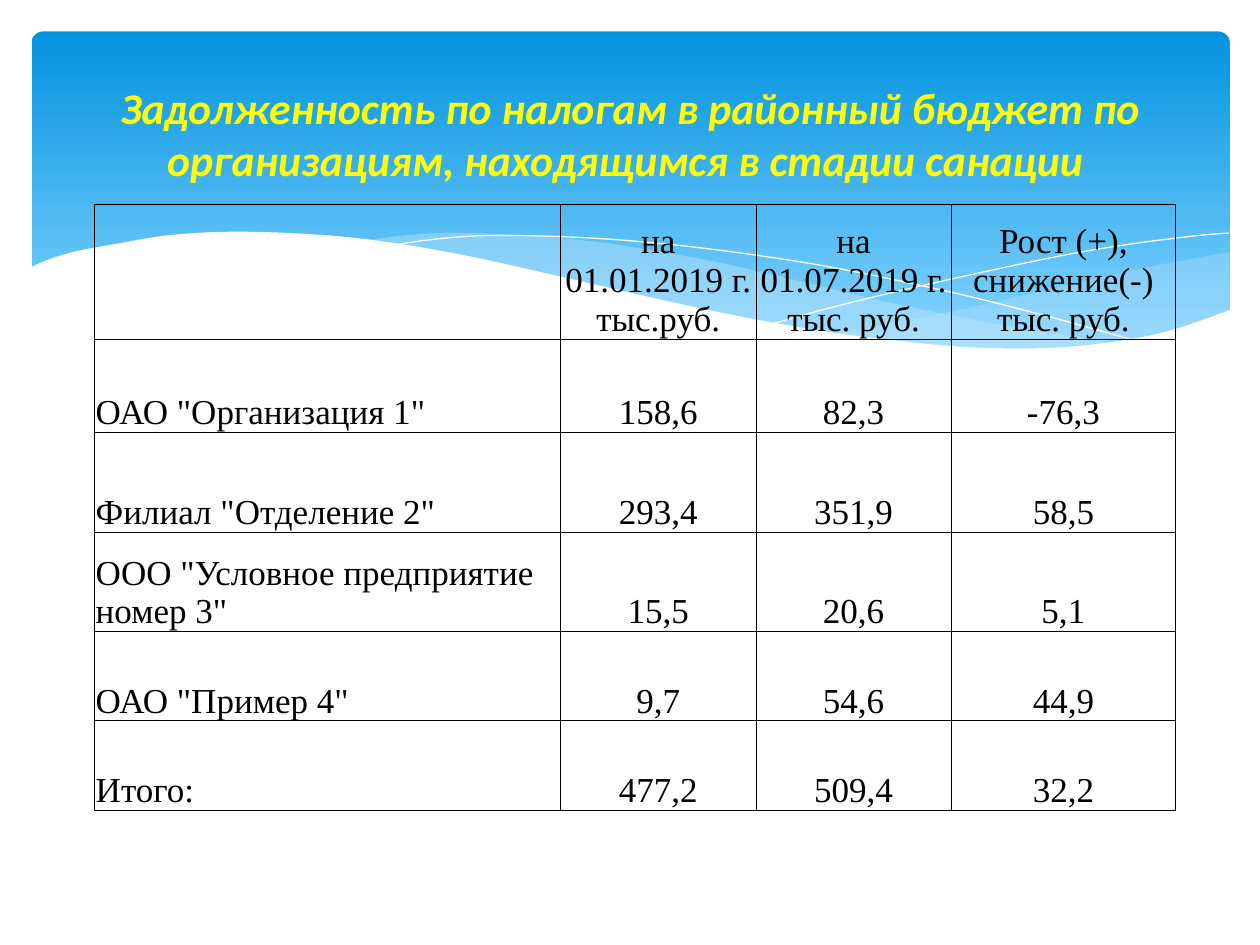
import dataclasses

import lxml.etree
import pptx
import pptx.dml.color
import pptx.enum.shapes
import pptx.enum.text
import pptx.oxml.ns
import pptx.util

Pt = pptx.util.Pt
qn = pptx.oxml.ns.qn
ALIGN = pptx.enum.text.PP_ALIGN
ANCHOR = pptx.enum.text.MSO_ANCHOR


@dataclasses.dataclass
class Theme:
    sky_top: str = "0293E0"
    sky_bottom: str = "83D3FE"
    wave: str = "C6E7FC"
    white: str = "FFFFFF"
    black: str = "000000"
    title: str = "FFFF00"
    title_font: str = "Calibri"
    table_font: str = "Times New Roman"
    title_size: float = 25
    table_size: float = 20
    border: float = 0.5


RIGHT_WAVE = [
    [(702.7, 144), (652, 153.4), (620, 160.6), (561, 174.2), (508.3, 185), (476, 190.8)],
    [(476, 190.8), (517.7, 195.8), (562, 199.4), (601, 199.4), (640, 196.6),
     (673, 188.6), (702.7, 177.8)],
]
MIDDLE_WAVE = [
    [(643, 196.6), (602.6, 190.8), (558, 183), (508, 172.8), (453, 159.8), (409.7, 149.8),
     (370, 142.6), (334.8, 137.5), (287, 133.9), (247.7, 133.2), (206, 137.5)],
    [(206, 137.5), (246, 143.3), (291, 152), (323.3, 159.8), (381.6, 172.8), (432.7, 183.6),
     (478.8, 191.5), (520, 197.3), (556.6, 199.4), (596, 200.2), (643, 196.6)],
]
FALLING_LINE = [
    [(222.5, 140.4), (247.7, 136.8), (278.6, 134.6), (324, 135.4), (367, 138.2),
     (419, 144), (478.8, 153.4), (547, 167.8), (598.3, 180.7), (653, 195.8)],
]
RISING_LINE = [
    [(441.4, 185), (483.8, 173.5), (538.6, 160.6), (602, 147), (644.4, 139.7),
     (684.7, 134.6), (702, 133.2)],
]
WHITE_WAVE = [
    [(703.4, 177), (669.6, 188.6), (638.6, 195), (602.6, 198.7), (560, 198.7),
     (522.7, 195.8), (481, 190.8), (434, 183), (381, 172), (321.8, 158.4),
     (262.8, 145.4), (210, 136.8), (165.6, 133.2), (127.4, 132.5), (95, 134.6),
     (68.4, 139), (42.5, 143.8), (26, 149), (16.6, 153.4)],
    [(16.6, 237), (703.4, 237)],
]

TITLE = "Задолженность по налогам в районный бюджет по организациям, находящимся в стадии санации "
ROWS = [
    ["", "на 01.01.2019 г. тыс.руб.", "на 01.07.2019 г. тыс. руб.",
     "Рост (+), снижение(-) тыс. руб."],
    ['ОАО "Организация 1"', "158,6", "82,3", "-76,3"],
    ['Филиал "Отделение 2"', "293,4", "351,9", "58,5"],
    ['ООО "Условное предприятие номер 3"', "15,5", "20,6", "5,1"],
    ['ОАО "Пример 4"', "9,7", "54,6", "44,9"],
    ["Итого:", "477,2", "509,4", "32,2"],
]
COLUMN_WIDTHS = [266.4, 111.6, 111.6, 128.2]
ROW_HEIGHTS = [77, 53.3, 56.9, 56.9, 51.1, 51.1]


def rgb(color):
    return pptx.dml.color.RGBColor.from_string(color)


def smooth(anchors, steps=6):
    if len(anchors) == 2:
        return anchors
    padded = [anchors[0], *anchors, anchors[-1]]
    points = [anchors[0]]
    for before, start, end, after in zip(padded, padded[1:], padded[2:], padded[3:]):
        for step in range(1, steps + 1):
            t = step / steps
            points.append(tuple(
                0.5 * (2 * b + (c - a) * t + (2 * a - 5 * b + 4 * c - d) * t ** 2
                       + (3 * b - a - 3 * c + d) * t ** 3)
                for a, b, c, d in zip(before, start, end, after)))
    return points


class SlideBuilder:
    def __init__(self, slide, theme):
        self.slide = slide
        self.theme = theme

    def format_text(self, para, font, size, color, align, emphasis=False):
        para.alignment = align
        for span in para.runs:
            span.font.name = font
            span.font.size = Pt(size)
            span.font.color.rgb = rgb(color)
            span.font.bold = span.font.italic = emphasis

    def gradient_panel(self, left, top, width, height, radius):
        panel = self.slide.shapes.add_shape(
            pptx.enum.shapes.MSO_SHAPE.ROUNDED_RECTANGLE,
            Pt(left), Pt(top), Pt(width), Pt(height))
        panel.adjustments[0] = radius
        panel.shadow.inherit = False
        panel.line.fill.background()
        panel.fill.gradient()
        panel.fill.gradient_angle = 270
        stops = [(0, self.theme.sky_top), (0.9, self.theme.sky_bottom)]
        for stop, (position, color) in zip(panel.fill.gradient_stops, stops):
            stop.position = position
            stop.color.rgb = rgb(color)

    def outline(self, edges, close):
        points = [(Pt(x), Pt(y)) for edge in edges for x, y in smooth(edge)]
        builder = self.slide.shapes.build_freeform(*points[0], scale=1.0)
        builder.add_line_segments(points[1:], close=close)
        shape = builder.convert_to_shape()
        shape.shadow.inherit = False
        return shape

    def wave(self, edges, color, opacity=100):
        shape = self.outline(edges, True)
        shape.line.fill.background()
        shape.fill.solid()
        shape.fill.fore_color.rgb = rgb(color)
        if opacity < 100:
            fill_color = shape._element.spPr.find(qn("a:solidFill"))[0]
            alpha = lxml.etree.SubElement(fill_color, qn("a:alpha"))
            alpha.set("val", str(opacity * 1000))

    def curve(self, edges):
        shape = self.outline(edges, False)
        shape.fill.background()
        shape.line.color.rgb = rgb(self.theme.white)
        shape.line.width = Pt(0)

    def border_cell(self, cell):
        properties = cell._tc.get_or_add_tcPr()
        for index, side in enumerate(("a:lnL", "a:lnR", "a:lnT", "a:lnB")):
            line = lxml.etree.Element(qn(side), w=str(Pt(self.theme.border)))
            fill = lxml.etree.SubElement(line, qn("a:solidFill"))
            lxml.etree.SubElement(fill, qn("a:srgbClr"), val=self.theme.black)
            properties.insert(index, line)

    def table(self, left, top, rows, widths, heights):
        table = self.slide.shapes.add_table(
            len(rows), len(widths), Pt(left), Pt(top),
            Pt(sum(widths)), Pt(sum(heights))).table
        table.first_row = table.horz_banding = False
        for column, width in zip(table.columns, widths):
            column.width = Pt(width)
        for row, height, texts in zip(table.rows, heights, rows):
            row.height = Pt(height)
            for index, (cell, text) in enumerate(zip(row.cells, texts)):
                cell.fill.background()
                cell.vertical_anchor = ANCHOR.BOTTOM
                cell.margin_left = cell.margin_right = cell.margin_top = Pt(0.72)
                cell.margin_bottom = Pt(0)
                cell.text_frame.text = text
                self.format_text(
                    cell.text_frame.paragraphs[0], self.theme.table_font,
                    self.theme.table_size, self.theme.black,
                    ALIGN.CENTER if index else ALIGN.LEFT)
                self.border_cell(cell)

    def title(self, text, left, top, width, height):
        box = self.slide.shapes.add_textbox(Pt(left), Pt(top), Pt(width), Pt(height))
        box.text_frame.word_wrap = True
        box.text_frame.vertical_anchor = ANCHOR.MIDDLE
        box.text_frame.text = text
        self.format_text(box.text_frame.paragraphs[0], self.theme.title_font,
                         self.theme.title_size, self.theme.title, ALIGN.CENTER, True)


def main():
    deck = pptx.Presentation()
    deck.slide_width, deck.slide_height = Pt(720), Pt(540)
    theme = Theme()
    page = SlideBuilder(deck.slides.add_slide(deck.slide_layouts[6]), theme)
    page.gradient_panel(18, 18, 684.7, 194.4, 0.034)
    page.wave(RIGHT_WAVE, theme.wave, 29)
    page.wave(MIDDLE_WAVE, theme.wave, 40)
    page.curve(FALLING_LINE)
    page.curve(RISING_LINE)
    page.wave(WHITE_WAVE, theme.white)
    page.table(54, 116.8, ROWS, COLUMN_WIDTHS, ROW_HEIGHTS)
    page.title(TITLE, 36, 26.6, 648, 98.6)
    deck.save("out.pptx")


if __name__ == "__main__":
    main()
